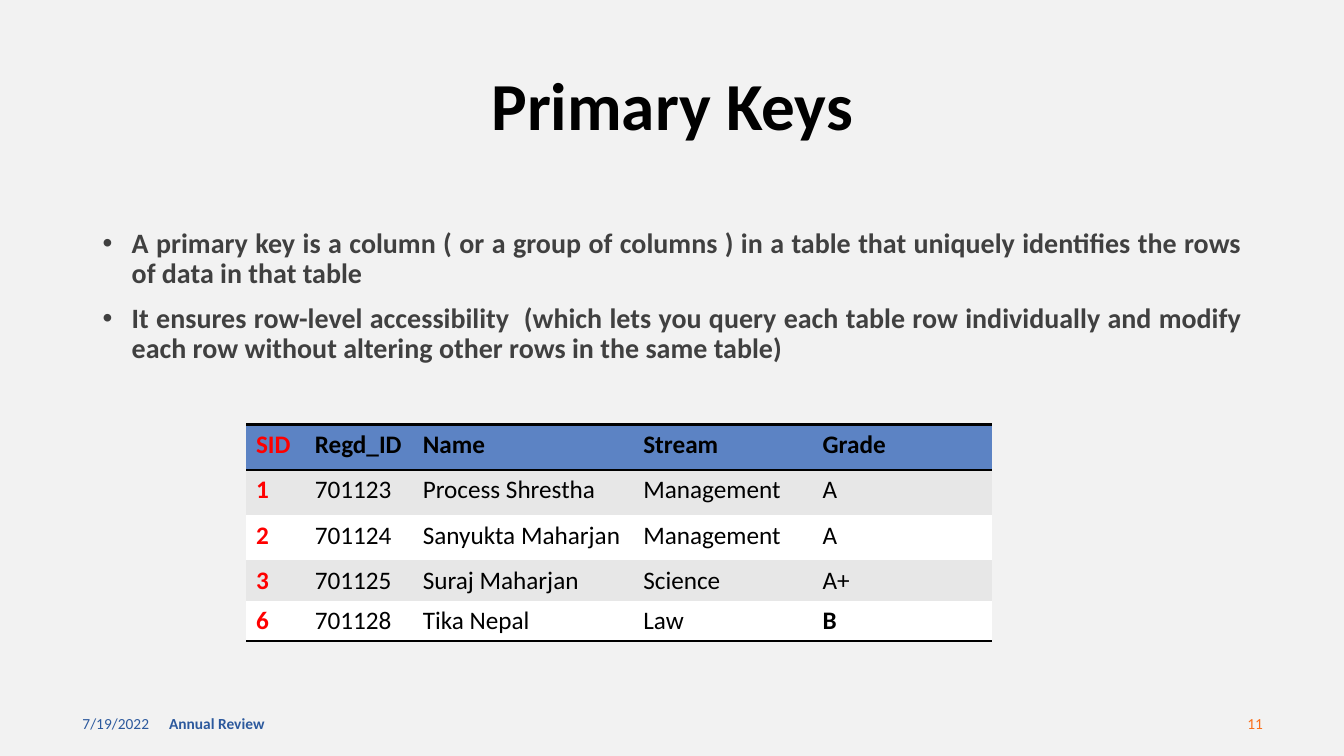
"""Build the Primary Keys slide with its bullets, student table and footer."""
from dataclasses import dataclass

from lxml.etree import SubElement
from pptx import Presentation
from pptx.dml.color import RGBColor
from pptx.enum.text import MSO_ANCHOR as Anchor, PP_ALIGN as Align
from pptx.oxml import parse_xml
from pptx.oxml.ns import nsdecls, qn
from pptx.slide import Slide
from pptx.table import _Cell as Cell
from pptx.text.text import _Paragraph as Paragraph
from pptx.util import Cm, Pt

FONT = "Calibri"
BACKGROUND = RGBColor(0xF2, 0xF2, 0xF2)
BLACK = RGBColor(0x00, 0x00, 0x00)
WHITE = RGBColor(0xFF, 0xFF, 0xFF)
RED = RGBColor(0xFF, 0x00, 0x00)
DARK_GRAY = RGBColor(0x40, 0x40, 0x40)
BAND_GRAY = RGBColor(0xE7, 0xE7, 0xE7)
HEADER_BLUE = RGBColor(0x5C, 0x83, 0xC4)
FOOTER_BLUE = RGBColor(0x2C, 0x59, 0x9D)
ORANGE = RGBColor(0xFA, 0x6F, 0x1A)
PLAIN_TABLE_STYLE = "{2D5ABB26-0587-4C30-8999-92F81FD0307C}"


@dataclass(frozen=True)
class TextBlock:
    text: str
    left: float
    top: float
    width: float
    height: float
    size: float
    color: RGBColor
    bold: bool = True
    align: Align = Align.LEFT
    anchor: Anchor = Anchor.MIDDLE
    line_spacing: float = 1.0
    bulleted: bool = False


BULLETS = (
    "A primary key is a column ( or a group of columns ) in a table that uniquely "
    "identifies the rows of data in that table\n"
    "It ensures row-level accessibility  (which lets you query each table row "
    "individually and modify each row without altering other rows in the same table)"
)
TEXT_BLOCKS = (
    TextBlock("7/19/2022", 1.83, 17.73, 7.62, 1.02, 11, FOOTER_BLUE, bold=False),
    TextBlock("Annual Review", 4.01, 17.73, 11.43, 1.02, 11, FOOTER_BLUE),
    TextBlock("11", 24.46, 17.73, 7.62, 1.02, 11, ORANGE, bold=False, align=Align.RIGHT),
    TextBlock(BULLETS, 2.34, 5.66, 29.21, 11.43, 20, DARK_GRAY, align=Align.JUSTIFY,
              anchor=Anchor.TOP, line_spacing=0.9, bulleted=True),
    TextBlock("Primary Keys", 2.34, 1.75, 29.21, 1.96, 48, BLACK, align=Align.CENTER,
              line_spacing=0.9),
)
STUDENTS = (
    ("SID", "Regd_ID", "Name", "Stream", "Grade"),
    ("1", "701123", "Process Shrestha", "Management", "A"),
    ("2", "701124", "Sanyukta Maharjan", "Management", "A"),
    ("3", "701125", "Suraj Maharjan", "Science", "A+"),
    ("6", "701128", "Tika Nepal", "Law", "B"),
)
COLUMN_WIDTHS = (1.48, 2.72, 5.56, 4.52, 4.52)
ROW_HEIGHTS = (1.14, 1.14, 1.14, 1.02, 1.02)


def format_runs(paragraph: Paragraph, size: float, color: RGBColor, bold: bool) -> None:
    """Give every run of a paragraph the same font."""
    for run in paragraph.runs:
        run.font.name = FONT
        run.font.size = Pt(size)
        run.font.bold = bold
        run.font.color.rgb = color


def add_bullet(paragraph: Paragraph) -> None:
    """Set a round bullet with a hanging indent."""
    paragraph.space_before = Pt(10)
    properties = paragraph._p.get_or_add_pPr()
    properties.set("marL", str(Cm(0.73)))
    properties.set("indent", str(-Cm(0.73)))
    SubElement(properties, qn("a:buFont"), typeface="Arial")
    SubElement(properties, qn("a:buChar"), char="•")


def add_text(slide: Slide, block: TextBlock) -> None:
    """Draw one text block."""
    box = slide.shapes.add_textbox(
        Cm(block.left), Cm(block.top), Cm(block.width), Cm(block.height))
    frame = box.text_frame
    frame.word_wrap = True
    frame.vertical_anchor = block.anchor
    frame.text = block.text
    for paragraph in frame.paragraphs:
        paragraph.alignment = block.align
        paragraph.line_spacing = block.line_spacing
        format_runs(paragraph, block.size, block.color, block.bold)
        if block.bulleted:
            add_bullet(paragraph)


def add_borders(cell: Cell, sides: tuple[str, ...]) -> None:
    """Draw black lines on the named sides of a cell, in schema order."""
    properties = cell._tc.get_or_add_tcPr()
    for position, side in enumerate(sides):
        properties.insert(position, parse_xml(
            f'<a:{side} {nsdecls("a")} w="{Pt(2)}"><a:solidFill>'
            f'<a:srgbClr val="{BLACK}"/></a:solidFill></a:{side}>'))


def add_student_table(slide: Slide) -> None:
    """Draw the student table with its key column in red."""
    last_row = len(STUDENTS) - 1
    table = slide.shapes.add_table(
        len(STUDENTS), len(COLUMN_WIDTHS), Cm(6.2), Cm(10.7),
        Cm(sum(COLUMN_WIDTHS)), Cm(sum(ROW_HEIGHTS))).table
    table.first_row = table.horz_banding = False
    table._tbl.tblPr.find(qn("a:tableStyleId")).text = PLAIN_TABLE_STYLE
    for column, width in zip(table.columns, COLUMN_WIDTHS):
        column.width = Cm(width)
    for row_index, (row, height) in enumerate(zip(table.rows, ROW_HEIGHTS)):
        row.height = Cm(height)
        is_header = row_index == 0
        fill = HEADER_BLUE if is_header else BAND_GRAY if row_index % 2 else WHITE
        sides = ("lnT", "lnB") if is_header else ("lnB",) if row_index == last_row else ()
        for column_index, (cell, value) in enumerate(zip(row.cells, STUDENTS[row_index])):
            is_key = column_index == 0
            cell.text = value
            cell.fill.solid()
            cell.fill.fore_color.rgb = fill
            format_runs(cell.text_frame.paragraphs[0], 18, RED if is_key else BLACK,
                        is_header or is_key or value == "B")
            add_borders(cell, sides)


def main() -> None:
    """Build and save the presentation."""
    presentation = Presentation()
    presentation.slide_width, presentation.slide_height = Cm(33.87), Cm(19.05)
    slide = presentation.slides.add_slide(presentation.slide_layouts[6])
    slide.background.fill.solid()
    slide.background.fill.fore_color.rgb = BACKGROUND
    for block in TEXT_BLOCKS:
        add_text(slide, block)
    add_student_table(slide)
    presentation.save("out.pptx")


if __name__ == "__main__":
    main()
